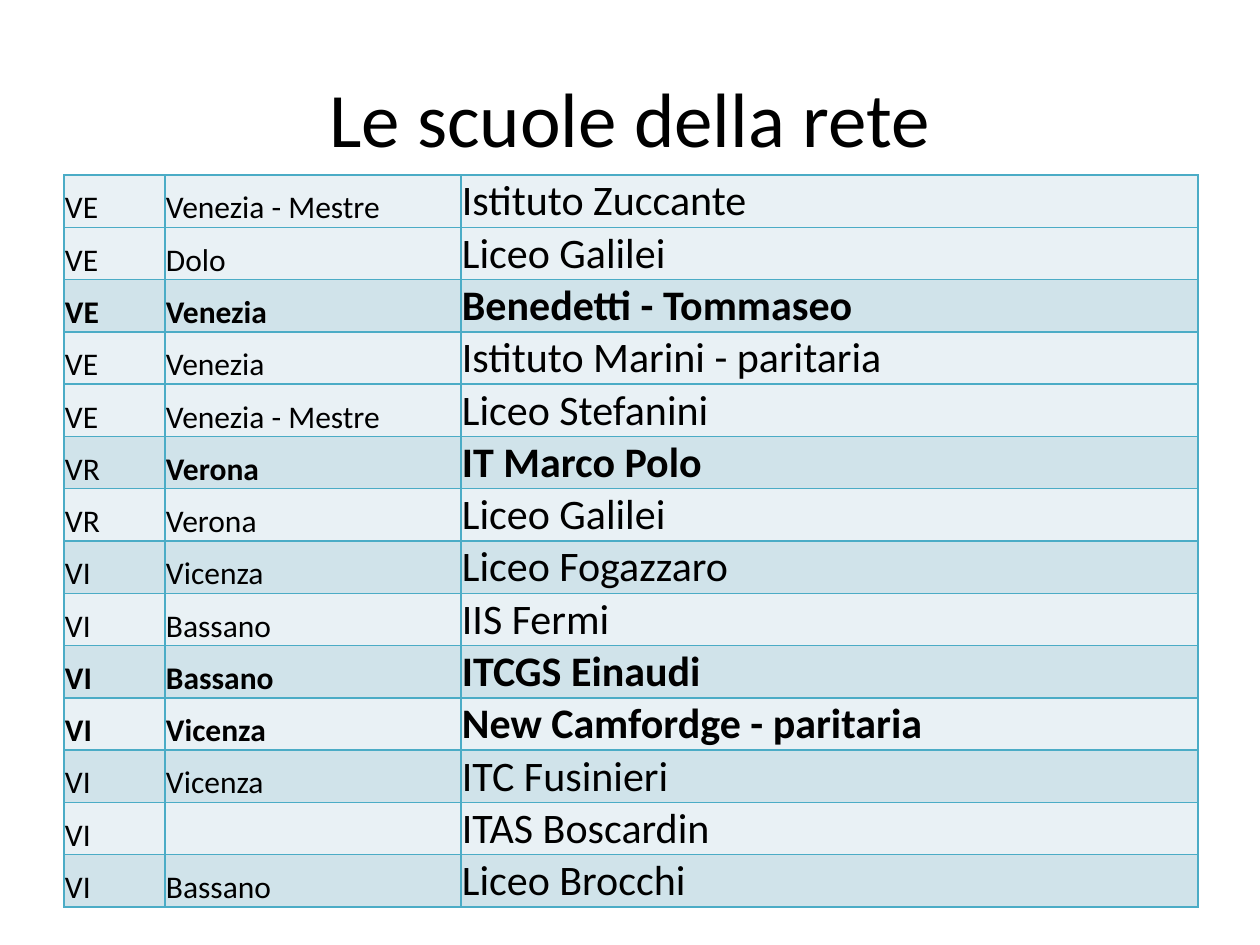
from lxml import etree
from pptx import Presentation
from pptx import util as u
from pptx.dml import color
from pptx.enum import text
from pptx.oxml import ns

PX_PER_INCH = 126
FONT = "Calibri"
BLACK, BORDER = "000000", "4BACC6"
LIGHT, DARK = "E9F1F5", "D0E3EA"
COLUMN_WIDTHS = (101, 296, 737)
COLUMN_SIZES = (18, 18, 24)

# province, town, school, row fill, columns in bold
SCHOOLS = [
    ("VE", "Venezia - Mestre", "Istituto Zuccante", LIGHT, ()),
    ("VE", "Dolo", "Liceo Galilei", LIGHT, ()),
    ("VE", "Venezia", "Benedetti - Tommaseo", DARK, (0, 1, 2)),
    ("VE", "Venezia", "Istituto Marini - paritaria", LIGHT, ()),
    ("VE", "Venezia - Mestre", "Liceo Stefanini", LIGHT, ()),
    ("VR", "Verona", "IT Marco Polo", DARK, (1, 2)),
    ("VR", "Verona", "Liceo Galilei", LIGHT, ()),
    ("VI", "Vicenza", "Liceo Fogazzaro", DARK, ()),
    ("VI", "Bassano", "IIS Fermi", LIGHT, ()),
    ("VI", "Bassano", "ITCGS Einaudi", DARK, (0, 1, 2)),
    ("VI", "Vicenza", "New Camfordge - paritaria", LIGHT, (0, 1, 2)),
    ("VI", "Vicenza", "ITC Fusinieri", DARK, ()),
    ("VI", "", "ITAS Boscardin", LIGHT, ()),
    ("VI", "Bassano", "Liceo Brocchi", DARK, ()),
]


def px(length):
    return u.Emu(round(length * u.Inches(1) / PX_PER_INCH))


def rgb(value):
    return color.RGBColor.from_string(value)


def set_all(target, values):
    for name, value in values.items():
        setattr(target, name, value)


def write(paragraph, words, size, bold=False):
    run = paragraph.add_run()
    run.text = words
    set_all(run.font, {"name": FONT, "size": u.Pt(size), "bold": bold})
    run.font.color.rgb = rgb(BLACK)


def add_borders(cell):
    properties = cell._tc.get_or_add_tcPr()
    for side in ("lnL", "lnR", "lnT", "lnB"):
        line = etree.SubElement(properties, ns.qn("a:" + side), w=str(u.Pt(1)))
        solid = etree.SubElement(line, ns.qn("a:solidFill"))
        etree.SubElement(solid, ns.qn("a:srgbClr"), val=BORDER)


def place_title(slide, left, top, width, height):
    title = slide.shapes.title
    set_all(title, {"left": px(left), "top": px(top),
                    "width": px(width), "height": px(height)})
    title.text_frame.vertical_anchor = text.MSO_ANCHOR.MIDDLE
    heading = title.text_frame.paragraphs[0]
    heading.alignment = text.PP_ALIGN.CENTER
    write(heading, "Le scuole della rete", 44)


def place_schools(slide, left, top, width, height):
    table = slide.shapes.add_table(
        len(SCHOOLS), len(COLUMN_WIDTHS),
        px(left), px(top), px(width), px(height)).table
    set_all(table, {"first_row": False, "horz_banding": False})
    for column, column_width in zip(table.columns, COLUMN_WIDTHS):
        column.width = px(column_width)

    cell_format = {"margin_left": px(1), "margin_right": px(1),
                   "margin_top": px(1), "margin_bottom": 0,
                   "vertical_anchor": text.MSO_ANCHOR.BOTTOM}
    for row, (*entries, fill, bold_columns) in zip(table.rows, SCHOOLS):
        row.height = px(height / len(SCHOOLS))
        for index, (cell, entry) in enumerate(zip(row.cells, entries)):
            set_all(cell, cell_format)
            add_borders(cell)
            cell.fill.solid()
            cell.fill.fore_color.rgb = rgb(fill)
            if entry:
                write(cell.text_frame.paragraphs[0], entry,
                      COLUMN_SIZES[index], index in bold_columns)


def main():
    deck = Presentation()
    set_all(deck, {"slide_width": px(1260), "slide_height": px(945)})
    title_only = deck.slide_layouts[5]
    slide = deck.slides.add_slide(title_only)
    place_title(slide, 63, 38, 1134, 157)
    place_schools(slide, 64, 175, sum(COLUMN_WIDTHS), 732)
    deck.save("out.pptx")


if __name__ == "__main__":
    main()
